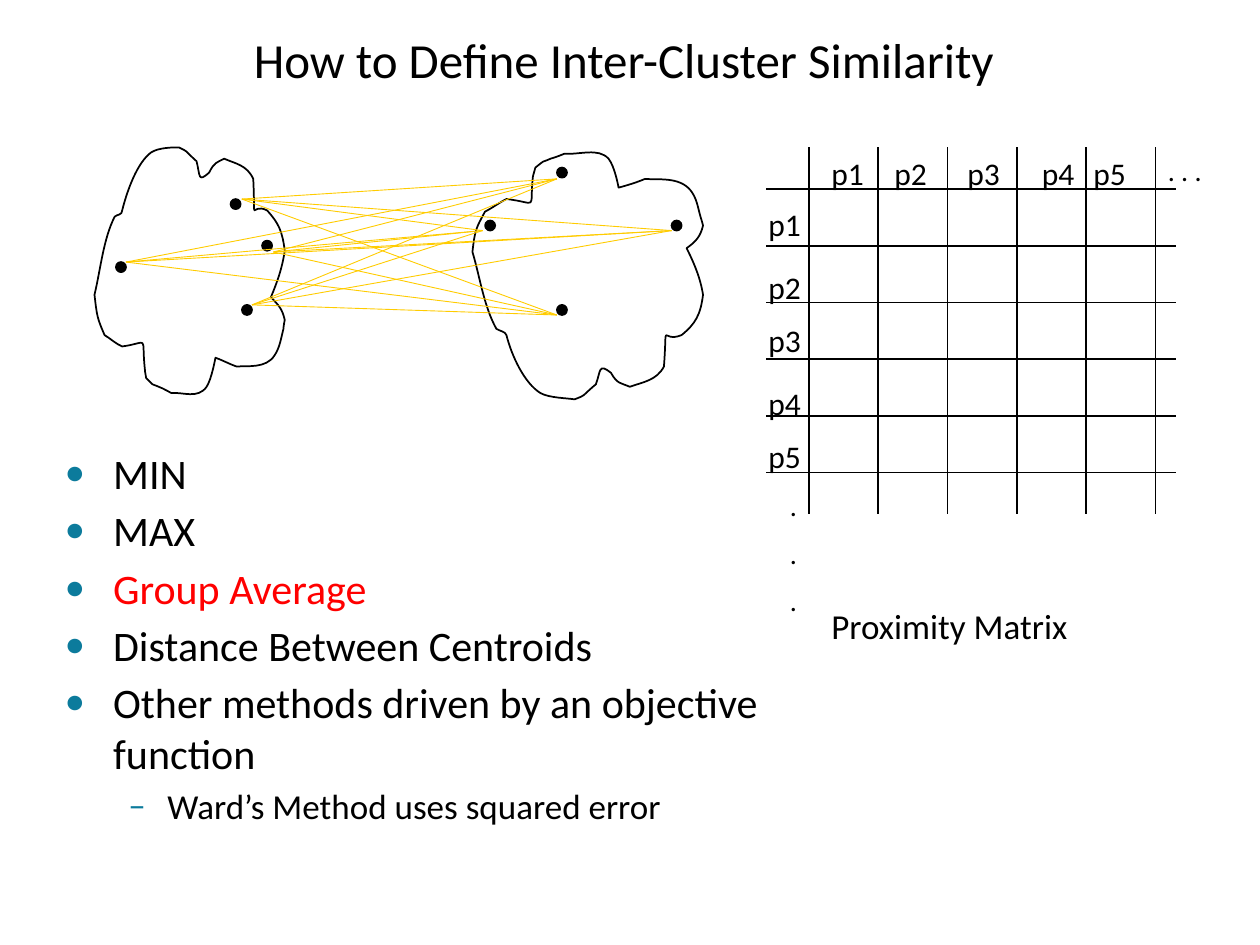
import itertools

import pptx
import pptx.dml.color
import pptx.enum.shapes
import pptx.enum.text
import pptx.oxml
import pptx.oxml.ns
import pptx.util

PX = 9144  # EMU per px, 100 px to the inch
FONT = "Calibri"
BLACK = pptx.dml.color.RGBColor(0, 0, 0)
RED = pptx.dml.color.RGBColor(0xFF, 0, 0)
TEAL = pptx.dml.color.RGBColor(0x0C, 0x7B, 0x9C)
GOLD = pptx.dml.color.RGBColor(0xFF, 0xCC, 0)
SHAPES = pptx.enum.shapes
TEXT = pptx.enum.text
qn = pptx.oxml.ns.qn

# Cluster outlines: a start point, then cubic curves (two controls and an end)
LEFT_OUTLINE = (91, 72), [
    (82, 90, 80, 113, 75, 134), (77, 151, 77, 152, 83, 166),
    (88, 169, 92, 173, 97, 175), (119, 172, 112, 165, 115, 193),
    (115, 196, 116, 198, 116, 200), (123, 207, 119, 204, 126, 207),
    (129, 208, 136, 212, 136, 212), (145, 211, 157, 217, 164, 207),
    (168, 201, 171, 184, 171, 184), (177, 186, 182, 189, 188, 191),
    (196, 190, 211, 193, 218, 182), (222, 176, 223, 169, 225, 161),
    (225, 159, 226, 154, 226, 154), (224, 145, 221, 142, 215, 136),
    (220, 124, 224, 113, 226, 99), (224, 83, 221, 77, 212, 67),
    (198, 60, 203, 82, 201, 42), (196, 31, 187, 30, 178, 26),
    (172, 29, 170, 29, 166, 37), (157, 45, 159, 40, 156, 28),
    (145, 18, 150, 21, 142, 17), (138, 17, 126, 17, 120, 21),
    (109, 29, 101, 51, 97, 67), (97, 71, 93, 70, 91, 72)]
RIGHT_OUTLINE = (394, 161), [
    (384, 143, 381, 120, 375, 100), (377, 82, 378, 81, 385, 68),
    (391, 65, 396, 61, 402, 58), (428, 61, 420, 68, 423, 40),
    (424, 38, 424, 35, 425, 33), (434, 26, 428, 30, 437, 26),
    (441, 25, 448, 22, 448, 22), (460, 23, 475, 17, 483, 26),
    (488, 32, 491, 49, 491, 49), (498, 47, 505, 45, 512, 42),
    (522, 43, 539, 40, 548, 51), (553, 57, 554, 65, 556, 72),
    (557, 75, 558, 79, 558, 79), (556, 88, 552, 92, 545, 97),
    (551, 109, 556, 121, 558, 134), (556, 150, 552, 157, 541, 166),
    (524, 173, 530, 151, 527, 191), (521, 202, 511, 203, 500, 207),
    (493, 204, 490, 205, 485, 196), (475, 188, 477, 194, 473, 205),
    (460, 216, 466, 213, 456, 217), (451, 216, 436, 216, 429, 212),
    (416, 204, 406, 182, 402, 166), (401, 163, 397, 163, 394, 161)]
DOTS = [(192, 142), (183, 58), (92, 108), (208, 91),
        (533, 75), (385, 75), (442, 142), (442, 33)]
LEFT_ENDS = [(200, 142), (217, 100), (100, 108), (192, 58)]
RIGHT_ENDS = [(442, 150), (383, 83), (442, 42), (533, 83)]


def emu(*lengths):
    return [length * PX for length in lengths]


def set_values(target, values):
    for name, value in values.items():
        setattr(target, name, value)


def add_run(paragraph, text, size, color=BLACK):
    run = paragraph.add_run()
    run.text = text
    set_values(run.font, {"name": FONT, "size": pptx.util.Pt(size)})
    run.font.color.rgb = color


def add_text(slide, box, lines, size, **frame_values):
    frame = slide.shapes.add_textbox(*emu(*box)).text_frame
    set_values(frame, {"word_wrap": True, **frame_values})
    for index, line in enumerate(lines):
        paragraph = frame.add_paragraph() if index else frame.paragraphs[0]
        if index:
            paragraph.space_before = pptx.util.Pt(size / 2)
        add_run(paragraph, line, size)
    return frame


def add_line(slide, start, end, color, width):
    line = slide.shapes.add_connector(
        SHAPES.MSO_CONNECTOR.STRAIGHT, *emu(*start, *end))
    line.line.color.rgb = color
    line.line.width = pptx.util.Pt(width)
    properties = line._element.spPr
    properties.append(properties.makeelement(qn("a:effectLst"), {}))


def outline_shape(shape):
    shape.shadow.inherit = False
    shape.line.color.rgb = BLACK
    shape.line.width = pptx.util.Pt(1)


def add_outline(slide, left, top, start, curves):
    points = [pair for curve in curves for pair in zip(curve[::2], curve[1::2])]
    builder = slide.shapes.build_freeform(*start, scale=PX)
    builder.add_line_segments(points, close=True)
    shape = builder.convert_to_shape(*emu(left, top))
    shape.fill.background()
    outline_shape(shape)
    # Join each three straight segments into one cubic curve
    segments = list(shape._element.iter(qn("a:lnTo")))
    for first in range(0, len(curves) * 3, 3):
        curve = shape._element.makeelement(qn("a:cubicBezTo"), {})
        segments[first].addprevious(curve)
        for segment in segments[first:first + 3]:
            curve.append(segment[0])
            segment.getparent().remove(segment)


def add_title(slide, box):
    frame = add_text(slide, box, ["How to Define Inter-Cluster Similarity"], 28,
                     vertical_anchor=TEXT.MSO_ANCHOR.MIDDLE)
    frame.paragraphs[0].alignment = TEXT.PP_ALIGN.CENTER


def add_matrix(slide, box):
    left, top, width, height = box
    # Grid lines
    for index in range(6):
        x, y = left + 42 + 55 * index, top + 33 + 45 * index
        add_line(slide, (x, top), (x, top + 291), BLACK, 1)
        add_line(slide, (left + 8, y), (left + 333, y), BLACK, 1)
    # Row and column labels
    row_offsets, column_offsets = (41, 91, 133, 183, 225), (50, 100, 158, 217, 258)
    for number, (down, across) in enumerate(zip(row_offsets, column_offsets), 1):
        for x, y in ((left, top + down), (left + across, top)):
            add_text(slide, (x, y, 58, 33), [f"p{number}"], 18)
    add_text(slide, (left + 317, top, 58, 37), [". . ."], 16)
    add_text(slide, (left + 17, top + 266, 58, 117), ["."] * 3, 16)
    # Caption
    add_text(slide, (left + 50, top + height - 43, 275, 43), ["Proximity Matrix"], 20)


def add_clusters(slide, box):
    left, top = box[:2]
    for start, curves in (LEFT_OUTLINE, RIGHT_OUTLINE):
        add_outline(slide, left, top, start, curves)
    for x, y in DOTS:
        dot = slide.shapes.add_shape(
            SHAPES.MSO_SHAPE.OVAL, *emu(left + x, top + y, 8, 8))
        dot.fill.solid()
        dot.fill.fore_color.rgb = BLACK
        outline_shape(dot)
    # Every point of one cluster is linked with every point of the other
    for (x1, y1), (x2, y2) in itertools.product(LEFT_ENDS, RIGHT_ENDS):
        add_line(slide, (left + x1, top + y1), (left + x2, top + y2), GOLD, 0.5)


def add_bullet(paragraph, symbol, margin, indent, percent):
    properties = paragraph._p.get_or_add_pPr()
    properties.set("marL", str(margin * PX))
    properties.set("indent", str(-indent * PX))
    color = pptx.oxml.ns.nsdecls("a")
    for markup in (f'<a:buClr {color}><a:srgbClr val="{TEAL}"/></a:buClr>',
                   f'<a:buSzPct {color} val="{percent * 1000}"/>',
                   f'<a:buFont {color} typeface="{FONT}"/>',
                   f'<a:buChar {color} char="{symbol}"/>'):
        properties.append(pptx.oxml.parse_xml(markup))


def add_methods(slide, box):
    frame = add_text(slide, box, [], 24)
    methods = [("MIN", BLACK, 0), ("MAX", BLACK, 0), ("Group Average", RED, 0),
               ("Distance Between Centroids", BLACK, 0),
               ("Other methods driven by an objective function", BLACK, 0),
               ("Ward’s Method uses squared error", BLACK, 1)]
    levels = [(24, ("●", 38, 38, 75)), (20, ("–", 81, 31, 100))]
    gap = pptx.util.Pt(2)
    for index, (text, color, level) in enumerate(methods):
        paragraph = frame.add_paragraph() if index else frame.paragraphs[0]
        set_values(paragraph, {"level": level, "space_before": gap, "space_after": gap})
        size, bullet = levels[level]
        add_bullet(paragraph, *bullet)
        add_run(paragraph, text, size, color)


def main():
    presentation = pptx.Presentation()
    presentation.slide_width, presentation.slide_height = emu(1000, 750)
    slide = presentation.slides.add_slide(presentation.slide_layouts[6])
    add_title(slide, (42, 17, 906, 60))
    add_matrix(slide, (600, 117, 375, 401))
    add_clusters(slide, (0, 100, 600, 240))
    add_methods(slide, (42, 350, 633, 342))
    presentation.save("out.pptx")


if __name__ == "__main__":
    main()
